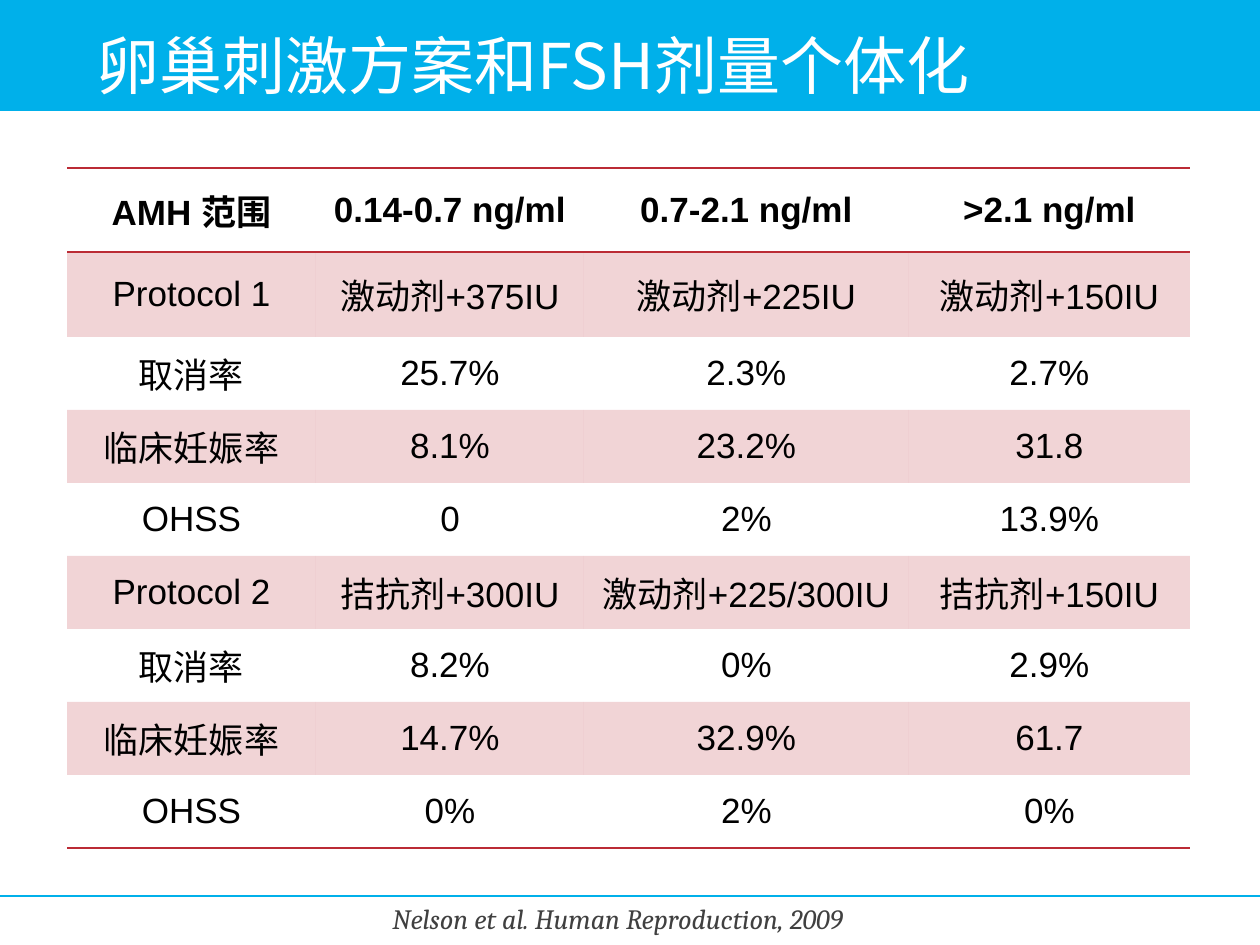
from lxml.etree import SubElement
from pptx import Presentation
from pptx.dml.color import RGBColor
from pptx.enum.shapes import MSO_CONNECTOR as Connector, MSO_SHAPE as Shape
from pptx.enum.text import MSO_ANCHOR as Anchor, MSO_AUTO_SIZE as AutoSize, PP_ALIGN as Align
from pptx.oxml.ns import qn
from pptx.util import Pt

TITLE = "卵巢刺激方案和FSH剂量个体化"
CITATION = "Nelson et al. Human Reproduction, 2009"
ROWS = [
    ("AMH 范围", "0.14-0.7 ng/ml", "0.7-2.1 ng/ml", ">2.1 ng/ml"),
    ("Protocol 1", "激动剂+375IU", "激动剂+225IU", "激动剂+150IU"),
    ("取消率", "25.7%", "2.3%", "2.7%"),
    ("临床妊娠率", "8.1%", "23.2%", "31.8"),
    ("OHSS", "0", "2%", "13.9%"),
    ("Protocol 2", "拮抗剂+300IU", "激动剂+225/300IU", "拮抗剂+150IU"),
    ("取消率", "8.2%", "0%", "2.9%"),
    ("临床妊娠率", "14.7%", "32.9%", "61.7"),
    ("OHSS", "0%", "2%", "0%"),
]
COLUMN_WIDTHS = [249, 268, 325, 281]
ROW_HEIGHTS = [84, 85] + [73] * 7
BLUE, RED = "00B0EA", "BB2B35"
CJK = "Noto Sans CJK SC"
PLAIN_TABLE = "{2D5ABB26-0587-4C30-8999-92F81FD0307C}"


def px(length):
    return round(length * 914400 / 126)


def box(*lengths):
    return [px(length) for length in lengths]


def color(value):
    return RGBColor.from_string(value)


def write(frame, text, size, font, ink="000000", bold=False, italic=False,
          align=Align.LEFT, anchor=Anchor.MIDDLE, spacing=None):
    frame.vertical_anchor = anchor
    paragraph = frame.paragraphs[0]
    paragraph.alignment = align
    paragraph.line_spacing = spacing
    run = paragraph.add_run()
    run.text = text
    run.font.size = Pt(size)
    run.font.name = font
    run.font.bold = bold
    run.font.italic = italic
    run.font.color.rgb = color(ink)
    SubElement(run.font._element, qn("a:ea"), typeface=CJK)


def rule_cell(cell, side):
    edge = SubElement(cell._tc.get_or_add_tcPr(), qn(f"a:ln{side}"), w=str(Pt(1)))
    SubElement(SubElement(edge, qn("a:solidFill")), qn("a:srgbClr"), val=RED)


def shade_cell(cell):
    cell.fill.solid()
    cell.fill.fore_color.rgb = color(RED)
    tint = cell._tc.tcPr.find(".//" + qn("a:solidFill") + "/" + qn("a:srgbClr"))
    SubElement(tint, qn("a:alpha"), val="20000")


def add_header(slide):
    rule = slide.shapes.add_connector(Connector.STRAIGHT, *box(0, 896, 1260, 896))
    rule.line.color.rgb = color(BLUE)
    rule.line.width = Pt(1.5)
    SubElement(rule._element.spPr, qn("a:effectLst"))

    banner = slide.shapes.add_shape(Shape.RECTANGLE, *box(0, 0, 1260, 110))
    banner.shadow.inherit = False
    banner.fill.solid()
    banner.fill.fore_color.rgb = color(BLUE)
    banner.line.color.rgb = color(BLUE)
    banner.line.width = Pt(1)

    title = slide.shapes.title
    title.left, title.top, title.width, title.height = box(84, 24, 1040, 91)
    write(title.text_frame, TITLE, 36, CJK, ink="FFFFFF", spacing=0.9)
    slide.shapes._spTree.append(title._element)


def add_results(slide):
    results = slide.shapes.add_table(
        len(ROWS), len(COLUMN_WIDTHS),
        *box(67, 168, sum(COLUMN_WIDTHS), sum(ROW_HEIGHTS))).table
    results.first_row = results.horz_banding = False
    results._tbl.tblPr.find(qn("a:tableStyleId")).text = PLAIN_TABLE
    for column, width in zip(results.columns, COLUMN_WIDTHS):
        column.width = px(width)
    last = len(ROWS) - 1
    for r, values in enumerate(ROWS):
        results.rows[r].height = px(ROW_HEIGHTS[r])
        for c, value in enumerate(values):
            cell = results.cell(r, c)
            cell.vertical_anchor = Anchor.MIDDLE
            write(cell.text_frame, value, 20, "Arial", bold=r == 0, align=Align.CENTER)
            if r == 0:
                rule_cell(cell, "T")
            if r in (0, last):
                rule_cell(cell, "B")
            if r % 2:
                shade_cell(cell)
            else:
                cell.fill.background()


def add_citation(slide):
    frame = slide.shapes.add_textbox(*box(380, 895, 499, 47)).text_frame
    frame.word_wrap = False
    frame.auto_size = AutoSize.SHAPE_TO_FIT_TEXT
    write(frame, CITATION, 16, "Cambria", ink="404040", italic=True, anchor=Anchor.TOP)


def main():
    deck = Presentation()
    deck.slide_width, deck.slide_height = box(1260, 945)
    slide = deck.slides.add_slide(deck.slide_layouts[5])
    add_header(slide)
    add_results(slide)
    add_citation(slide)
    deck.save("out.pptx")


if __name__ == "__main__":
    main()
